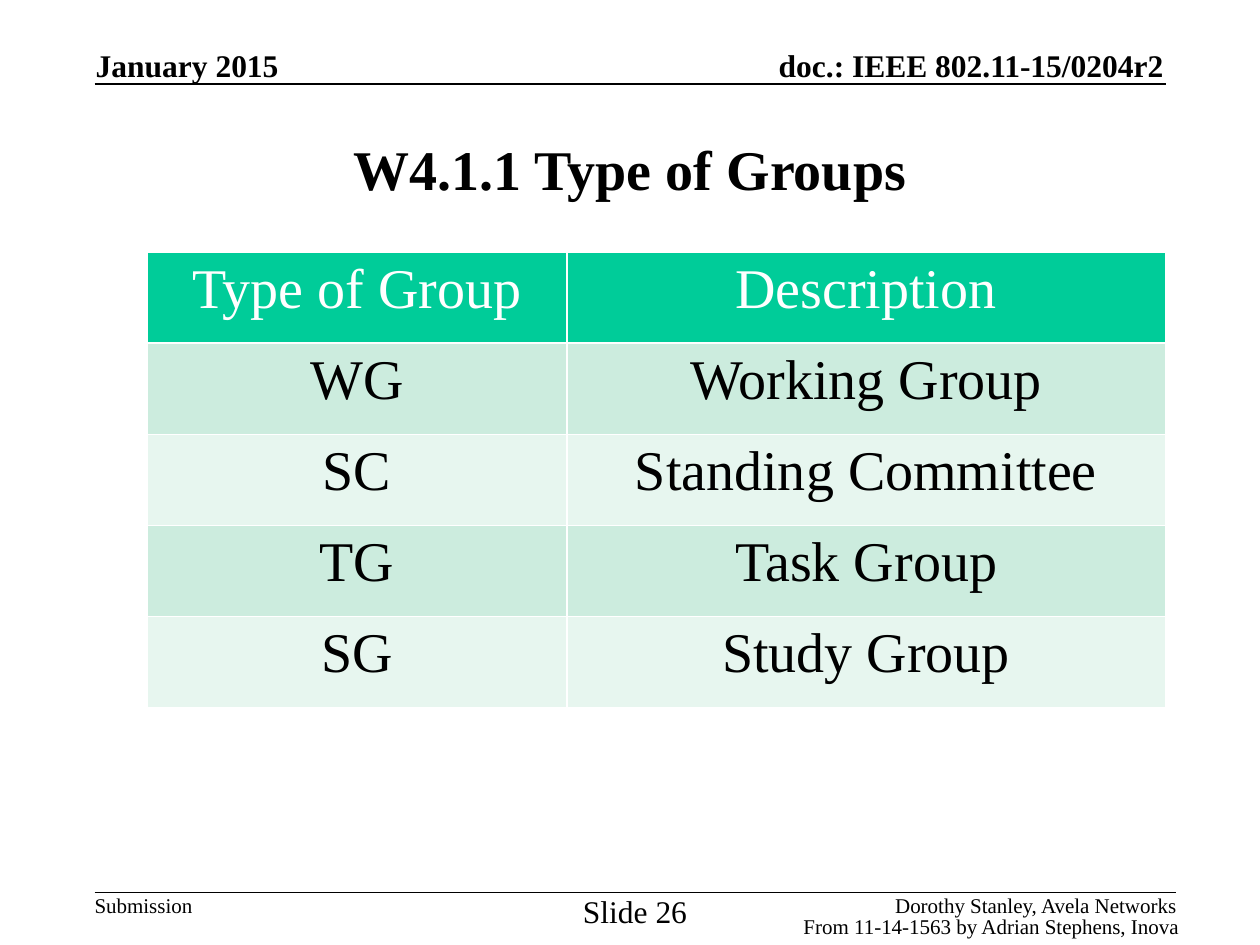
from lxml import etree
from pptx import Presentation
from pptx.dml.color import RGBColor
from pptx.enum.shapes import MSO_CONNECTOR
from pptx.enum.text import MSO_ANCHOR, PP_ALIGN
from pptx.oxml.ns import qn
from pptx.util import Pt

LEFT, CENTER, RIGHT = PP_ALIGN.LEFT, PP_ALIGN.CENTER, PP_ALIGN.RIGHT
TOP, MIDDLE, BOTTOM = MSO_ANCHOR.TOP, MSO_ANCHOR.MIDDLE, MSO_ANCHOR.BOTTOM

# Content
TITLE = "W4.1.1 Type of Groups"
GROUPS = [
    ("Type of Group", "Description"),
    ("WG", "Working Group"),
    ("SC", "Standing Committee"),
    ("TG", "Task Group"),
    ("SG", "Study Group"),
]

THEME = {
    "font": "Times New Roman",
    "text": "000000", "white": "FFFFFF",
    "header": "00CC99", "bands": ("CCECDE", "E7F6EF"),
    "large": 32, "medium": 18, "small": 12,
}

# Text, box (left, top, width, height), alignment, anchor, size, bold
MARGINALS = [
    ("January 2015", (54.7, 26.4, 143, 21.6), LEFT, BOTTOM, "medium", True),
    ("doc.: IEEE 802.11-15/0204r2", (406.5, 26.4, 258.5, 21.6), RIGHT, BOTTOM, "medium", True),
    ("Submission", (54, 510, 56, 14.4), LEFT, TOP, "small", False),
    ("Slide 26", (332.4, 510, 61, 21.6), CENTER, TOP, "medium", False),
    ("Dorothy Stanley, Avela Networks", (472, 510, 200.5, 14.4), RIGHT, TOP, "small", False),
    ("From 11-14-1563 by Adrian Stephens, Inova", (442, 522, 232, 14.4), RIGHT, TOP, "small", False),
]
RULES = [(54, 666, 48), (54, 672, 510)]  # left, right, y
TITLE_BOX = (54, 54, 612, 84)
TABLE_LEFT, TABLE_TOP, ROW_HEIGHT = 84, 144, 52.1
COLUMNS = (240, 342)


def rgb(name):
    return RGBColor.from_string(THEME.get(name, name))


def write(tf, text, size, align, color="text", bold=False):
    p = tf.paragraphs[0]
    p.alignment = align
    r = p.add_run()
    r.text = text
    fmt = {"name": THEME["font"], "size": Pt(THEME[size]), "bold": bold}
    for key, value in fmt.items():
        setattr(r.font, key, value)
    r.font.color.rgb = rgb(color)


def set_frame(tf, anchor, wrap, margin_x=0, margin_y=0):
    fmt = {
        "vertical_anchor": anchor, "word_wrap": wrap,
        "margin_left": Pt(margin_x), "margin_right": Pt(margin_x),
        "margin_top": Pt(margin_y), "margin_bottom": Pt(margin_y),
    }
    for key, value in fmt.items():
        setattr(tf, key, value)


def set_borders(cell, color, width):
    tc_pr = cell._tc.get_or_add_tcPr()
    for i, side in enumerate(("a:lnL", "a:lnR", "a:lnT", "a:lnB")):
        ln = etree.Element(qn(side), w=str(Pt(width)))
        fill = etree.SubElement(ln, qn("a:solidFill"))
        etree.SubElement(fill, qn("a:srgbClr"), val=THEME[color])
        tc_pr.insert(i, ln)


def add_rule(slide, left, right, y):
    line = slide.shapes.add_connector(
        MSO_CONNECTOR.STRAIGHT, Pt(left), Pt(y), Pt(right), Pt(y))
    line.line.color.rgb = rgb("text")
    line.line.width = Pt(1)
    etree.SubElement(line._element.spPr, qn("a:effectLst"))


def add_group_table(slide):
    table = slide.shapes.add_table(
        len(GROUPS), len(COLUMNS), Pt(TABLE_LEFT), Pt(TABLE_TOP),
        Pt(sum(COLUMNS)), Pt(ROW_HEIGHT * len(GROUPS))).table
    table.horz_banding = False
    for column, width in zip(table.columns, COLUMNS):
        column.width = Pt(width)
    for i, group in enumerate(GROUPS):
        table.rows[i].height = Pt(ROW_HEIGHT)
        fill = THEME["bands"][(i - 1) % 2] if i else "header"
        for j, text in enumerate(group):
            cell = table.cell(i, j)
            cell.fill.solid()
            cell.fill.fore_color.rgb = rgb(fill)
            set_borders(cell, "white", 1)
            write(cell.text_frame, text, "large", CENTER, "text" if i else "white")


def main():
    prs = Presentation()
    prs.slide_width, prs.slide_height = Pt(720), Pt(540)
    slide = prs.slides.add_slide(prs.slide_layouts[5])

    # Title
    title = slide.shapes.title
    title.left, title.top, title.width, title.height = map(Pt, TITLE_BOX)
    set_frame(title.text_frame, MIDDLE, True, 7.2, 3.6)
    write(title.text_frame, TITLE, "large", CENTER, bold=True)

    # Header and footer
    for rule in RULES:
        add_rule(slide, *rule)
    for text, box, align, anchor, size, bold in MARGINALS:
        tf = slide.shapes.add_textbox(*map(Pt, box)).text_frame
        set_frame(tf, anchor, False)
        write(tf, text, size, align, bold=bold)

    # Table of groups
    add_group_table(slide)
    prs.save("out.pptx")


if __name__ == "__main__":
    main()
